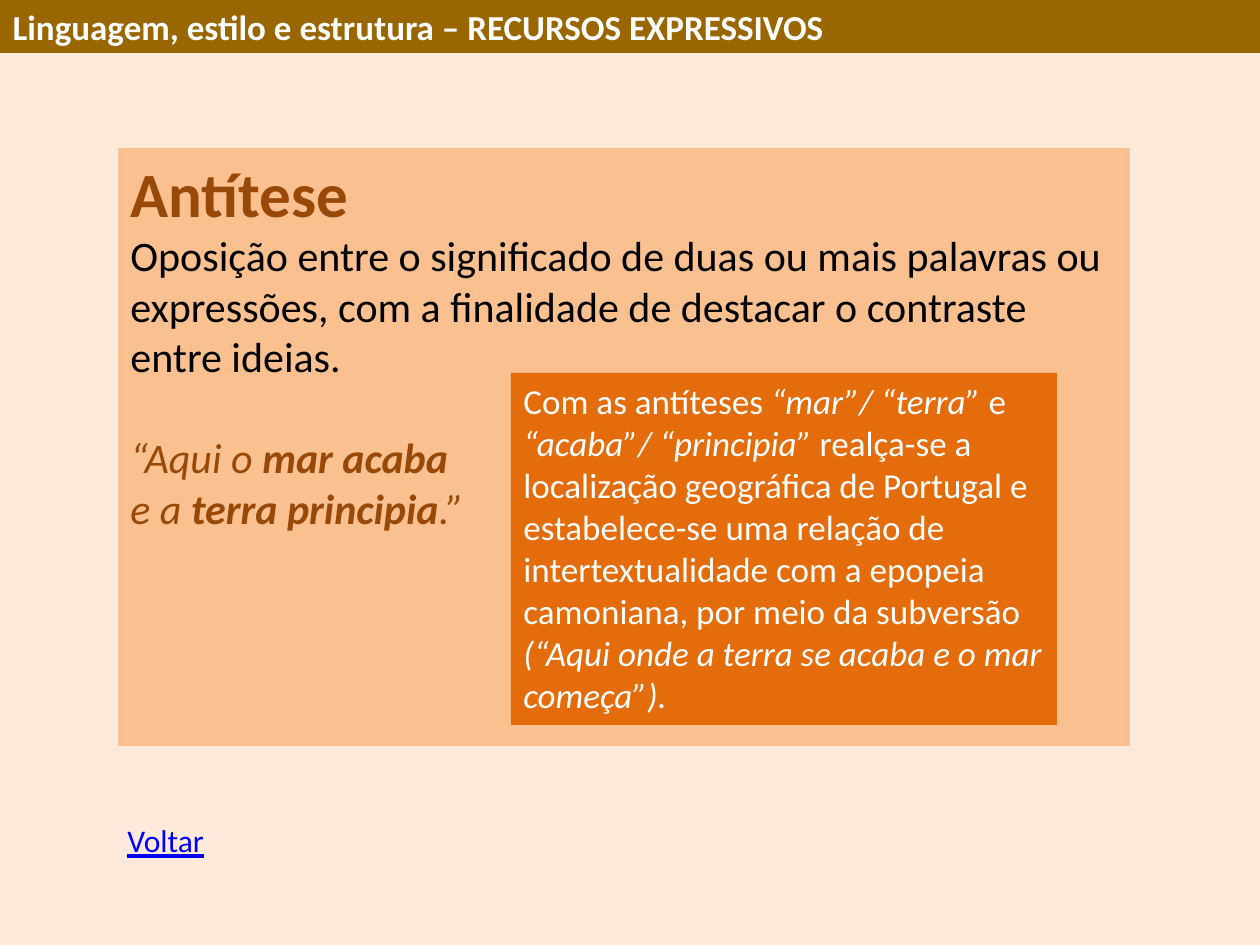
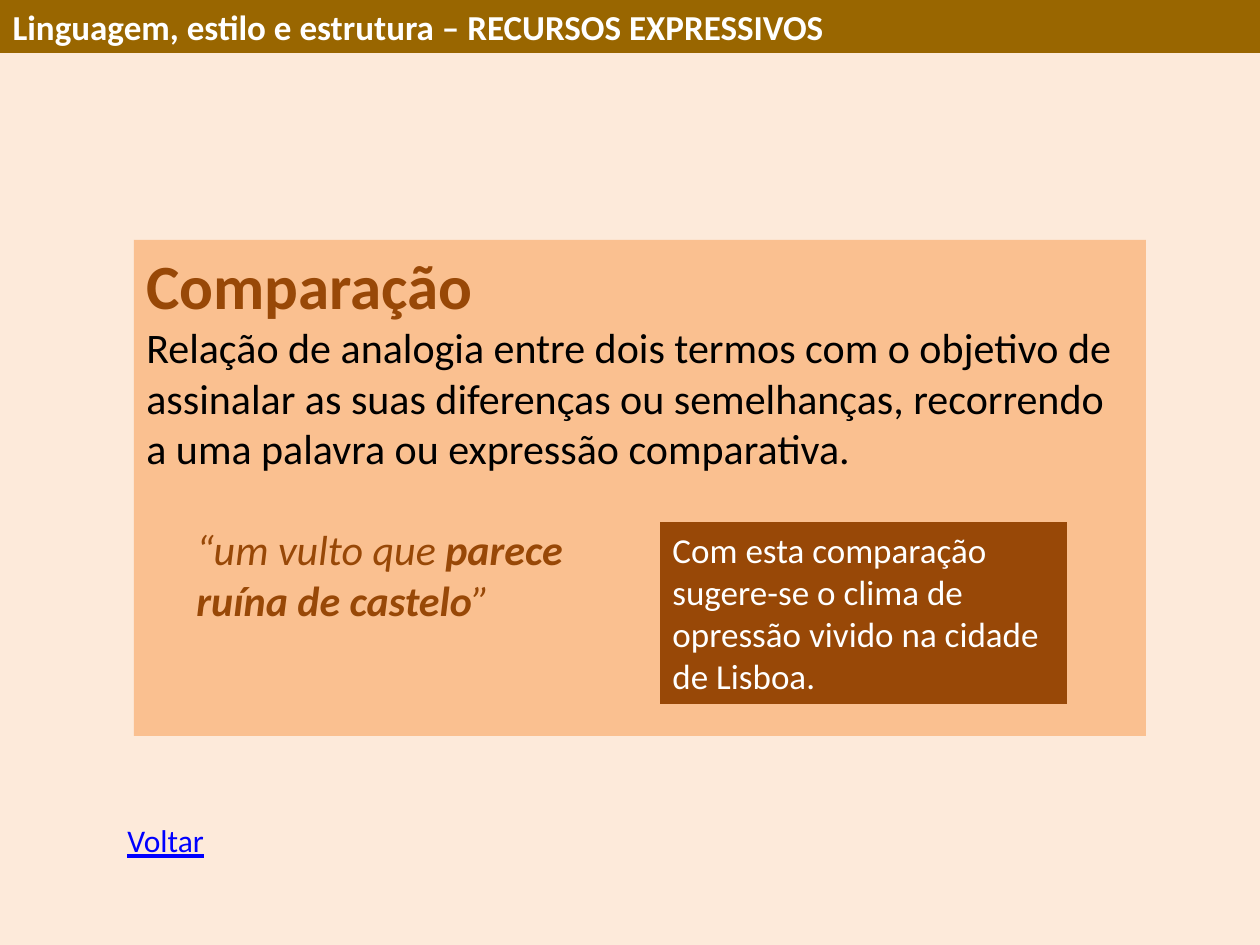
from pptx import Presentation
from pptx.dml.color import RGBColor
from pptx.enum.shapes import MSO_SHAPE
from pptx.enum.text import MSO_ANCHOR, MSO_AUTO_SIZE, PP_ALIGN
from pptx.util import Pt

RECTANGLE = MSO_SHAPE.RECTANGLE
TOP, MIDDLE = MSO_ANCHOR.TOP, MSO_ANCHOR.MIDDLE
NO_AUTOSIZE = MSO_AUTO_SIZE.NONE
LEFT = PP_ALIGN.LEFT
TITLE_ONLY = 5

EMU_PER_PX = 914400 / 126
PAGE_WIDTH, PAGE_HEIGHT = 1260, 945

# Shared colours
CREAM, PEACH, ORANGE = "FDEADA", "FAC090", "E46C0A"
BROWN, OCHRE = "984807", "996600"
WHITE, BLACK, BLUE = "FFFFFF", "000000", "0000FF"

# Shared text formats
FONT = "Calibri"
BAND_TEXT = {"size": Pt(20), "bold": True, "color": WHITE}
TERM = {"size": Pt(36), "bold": True, "color": BROWN}
DEFINITION = {"size": Pt(24), "color": BLACK}
QUOTE = {"size": Pt(24), "italic": True, "color": BROWN}
QUOTE_KEY = {**QUOTE, "bold": True}
NOTE = {"size": Pt(20), "color": WHITE}
NOTE_QUOTE = {**NOTE, "italic": True}
BACK = {"size": Pt(18), "underline": True, "color": BLUE}

BAND_TITLE = "Linguagem, estilo e estrutura – RECURSOS EXPRESSIVOS"
QUOTE_GAP = Pt(29)
PANEL_WIDTH = 1012


def px(length):
    return round(length * EMU_PER_PX)


def rgb(code):
    return RGBColor.from_string(code)


def paint(target, color):
    target.fill.solid()
    target.fill.fore_color.rgb = rgb(color)


def write(box, paragraphs, anchor=TOP):
    """Fill a box with paragraphs, each a list of (text, format) spans."""
    frame = box.text_frame
    frame.word_wrap = True
    frame.auto_size = NO_AUTOSIZE
    frame.vertical_anchor = anchor
    for index, spans in enumerate(paragraphs):
        para = frame.add_paragraph() if index else frame.paragraphs[0]
        para.alignment = LEFT
        for text, style in spans:
            span = para.add_run()
            span.text = text
            span.font.name = FONT
            for name, value in style.items():
                if name == "color":
                    span.font.color.rgb = rgb(value)
                else:
                    setattr(span.font, name, value)
    return frame.paragraphs


def add_block(page, bounds, color, paragraphs):
    block = page.shapes.add_shape(RECTANGLE, *map(px, bounds))
    block.shadow.inherit = False
    block.line.fill.background()
    paint(block, color)
    return write(block, paragraphs)


def add_band(page):
    band = page.shapes.title
    band.left, band.top = 0, 0
    band.width, band.height = px(PAGE_WIDTH), px(53)
    paint(band, OCHRE)
    write(band, [[(BAND_TITLE, BAND_TEXT)]], MIDDLE)


def add_panel(page, bounds, term, definition, quote, indent=0):
    lines = add_block(page, bounds, PEACH,
                      [[(term, TERM)], [(definition, DEFINITION)], *quote])
    quote_lines = lines[2:]
    quote_lines[0].space_before = QUOTE_GAP
    for para in quote_lines:
        para._p.get_or_add_pPr().set("marL", str(px(indent)))


def add_back_label(page):
    label = page.shapes.add_textbox(*map(px, (115, 815, 218, 50)))
    write(label, [[("Voltar", BACK)]])


def add_device_page(deck, panel, note_bounds, note_color, note):
    page = deck.slides.add_slide(deck.slide_layouts[TITLE_ONLY])
    add_band(page)
    add_panel(page, **panel)
    add_block(page, note_bounds, note_color, [note])
    add_back_label(page)


def main():
    deck = Presentation()
    deck.slide_width, deck.slide_height = px(PAGE_WIDTH), px(PAGE_HEIGHT)
    paint(deck.slide_master.background, CREAM)

    # Antithesis
    add_device_page(
        deck,
        panel={
            "bounds": (118, 148, PANEL_WIDTH, 598),
            "term": "Antítese",
            "definition": "Oposição entre o significado de duas ou mais palavras ou "
                          "expressões, com a finalidade de destacar o contraste "
                          "entre ideias.",
            "quote": [
                [("“Aqui o ", QUOTE), ("mar acaba", QUOTE_KEY)],
                [("e a ", QUOTE), ("terra principia", QUOTE_KEY), (".”", QUOTE)],
            ],
        },
        note_bounds=(511, 373, 546, 352),
        note_color=ORANGE,
        note=[
            ("Com as antíteses ", NOTE),
            ("“mar”/ “terra” ", NOTE_QUOTE),
            ("e ", NOTE),
            ("“acaba”/ “principia” ", NOTE_QUOTE),
            ("realça-se a localização geográfica de Portugal e estabelece-se uma "
             "relação de intertextualidade com a epopeia camoniana, por meio da "
             "subversão ", NOTE),
            ("(“Aqui onde a terra se acaba e o mar começa”).", NOTE_QUOTE),
        ],
    )

    # Comparison
    add_device_page(
        deck,
        panel={
            "bounds": (134, 240, PANEL_WIDTH, 496),
            "term": "Comparação",
            "definition": "Relação de analogia entre dois termos com o objetivo de "
                          "assinalar as suas diferenças ou semelhanças, recorrendo "
                          "a uma palavra ou expressão comparativa.",
            "quote": [
                [("“um vulto que ", QUOTE), ("parece", QUOTE_KEY)],
                [("ruína de castelo", QUOTE_KEY), ("”", QUOTE)],
            ],
            "indent": 50,
        },
        note_bounds=(660, 522, 407, 182),
        note_color=BROWN,
        note=[("Com esta comparação sugere-se o clima de opressão vivido na cidade "
               "de Lisboa.", NOTE)],
    )

    deck.save("out.pptx")


if __name__ == "__main__":
    main()
